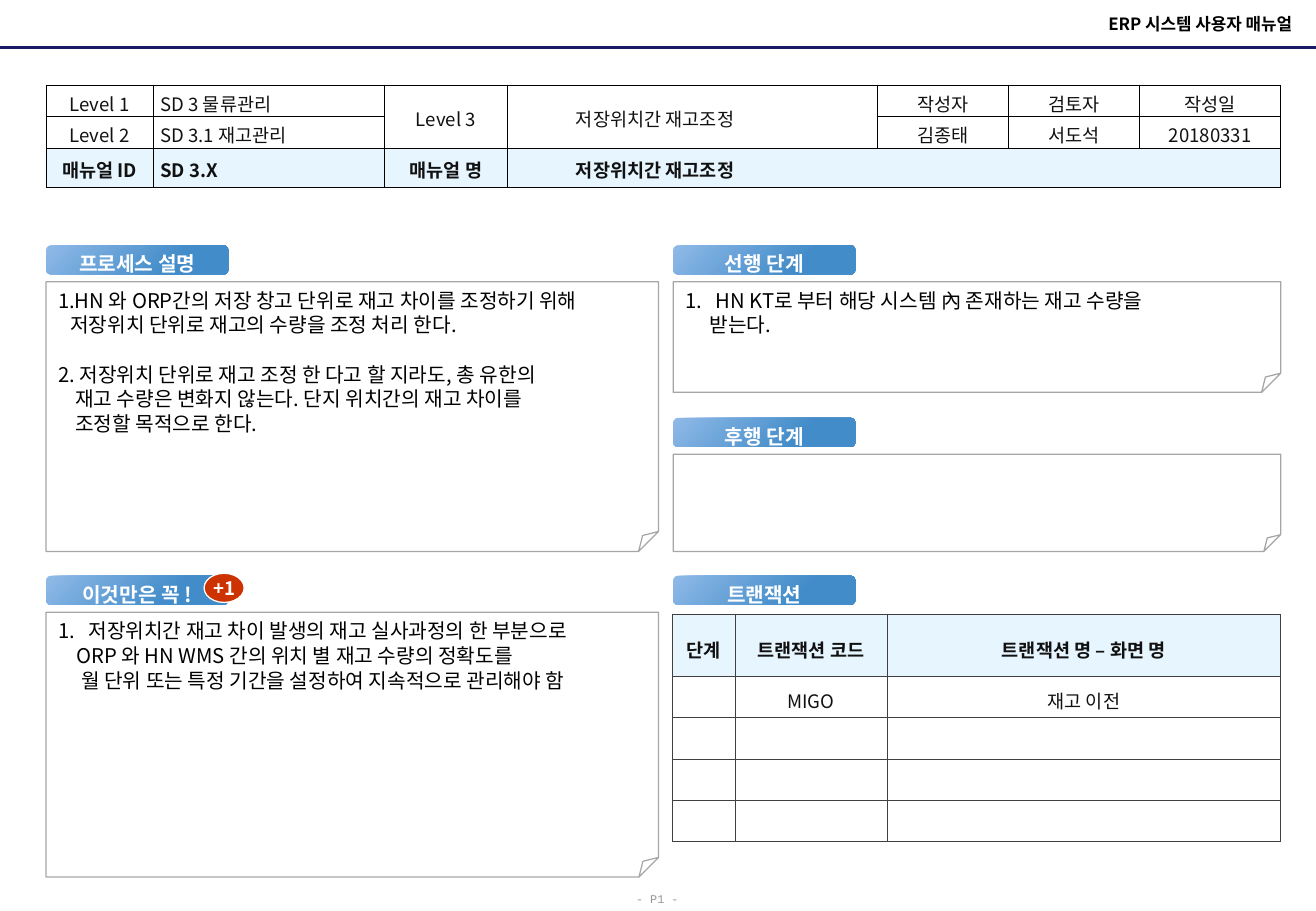
from lxml import etree
from pptx import Presentation
from pptx.dml.color import RGBColor
from pptx.enum.shapes import MSO_CONNECTOR, MSO_SHAPE
from pptx.enum.text import MSO_ANCHOR, PP_ALIGN
from pptx.oxml.ns import qn
from pptx.util import Inches, Pt

BLACK = RGBColor(0, 0, 0)
INK = RGBColor(0x11, 0x11, 0x11)
WHITE = RGBColor(0xFF, 0xFF, 0xFF)
GRAY = RGBColor(0x96, 0x96, 0x96)
NOTE_EDGE = RGBColor(0xA6, 0xA6, 0xA6)
NAVY = RGBColor(0x19, 0x19, 0x66)
RED = RGBColor(0xCC, 0x33, 0x00)
PALE_BLUE = RGBColor(0xE7, 0xF5, 0xFE)
LABEL_START = RGBColor(0x90, 0xBA, 0xE8)
LABEL_END = RGBColor(0x42, 0x8C, 0xC9)
SANS = "Noto Sans CJK KR"
LEFT, RIGHT = 0.38, 5.54
CENTER = PP_ALIGN.CENTER

LABELS = [
    ("프로세스 설명", LEFT, 2.02),
    ("선행 단계", RIGHT, 2.02),
    ("후행 단계", RIGHT, 3.44),
    ("이것만은 꼭 !", LEFT, 4.74),
    ("트랜잭션", RIGHT, 4.74),
]

NOTES = [
    ((LEFT, 2.32, 5.04, 2.22), 0.074, [
        ("1.HN 와 ORP간의 저장 창고 단위로 재고 차이를 조정하기 위해", 0, 0, False),
        ("저장위치 단위로 재고의 수량을 조정 처리 한다.", 0.1, 0, False),
        ("2. 저장위치 단위로 재고 조정 한 다고 할 지라도, 총 유한의", 0, 14.6, False),
        ("재고 수량은 변화지 않는다. 단지 위치간의 재고 차이를", 0.14, 0, False),
        ("조정할 목적으로 한다.", 0.14, 0, False),
    ]),
    ((RIGHT, 2.32, 5, 0.91), 0.173, [
        ("HN KT로 부터 해당 시스템 內 존재하는 재고 수량을", 0.25, 0, True),
        ("받는다.", 0.2, 0, False),
    ]),
    ((RIGHT, 3.74, 5, 0.8), 0.173, []),
    ((LEFT, 5.04, 5.04, 2.18), 0.074, [
        ("저장위치간 재고 차이 발생의 재고 실사과정의 한 부분으로", 0.25, 0, True),
        ("ORP 와 HN WMS 간의 위치 별 재고 수량의 정확도를", 0.15, 0, False),
        ("월 단위 또는 특정 기간을 설정하여 지속적으로 관리해야 함", 0.19, 0, False),
    ]),
]

MANUAL = {
    "place": (LEFT, 0.7), "cols": [0.88, 1.9, 1.02, 3.04, 1.08, 1.08, 1.16],
    "rows": [0.26, 0.26, 0.32], "edge": "000000", "spacing": 17,
    "shaded": 2, "left": {1: 0, 3: 0.5}, "insets": (0.06, 0.02, 0.06, 0),
    "merges": [(0, 2, 1, 2), (0, 3, 1, 3), (2, 3, 2, 6)], "plain": WHITE,
    "cells": [
        ["Level 1", "SD 3 물류관리", "Level 3", "저장위치간 재고조정", "작성자", "검토자", "작성일"],
        ["Level 2", "SD 3.1 재고관리", "", "", "김종태", "서도석", "20180331"],
        ["매뉴얼 ID", "SD 3.X", "매뉴얼 명", "저장위치간 재고조정", "", "", ""],
    ],
}
TRANSACTIONS = {
    "place": (5.53, 5.06), "cols": [0.52, 1.25, 3.24],
    "rows": [0.51, 0.34, 0.34, 0.34, 0.34], "edge": "404040", "spacing": 20,
    "shaded": 0, "left": {}, "insets": (0.05, 0.02, 0.05, 0.02),
    "merges": [], "plain": None,
    "cells": [
        ["단계", "트랜잭션 코드", "트랜잭션 명 – 화면 명"],
        ["", "MIGO", "재고 이전"],
        ["", "", ""], ["", "", ""], ["", "", ""],
    ],
}


def set_all(target, values):
    for name, value in values.items():
        setattr(target, name, value)


def set_insets(target, insets):
    sides = ("margin_left", "margin_top", "margin_right", "margin_bottom")
    set_all(target, {side: Inches(inset) for side, inset in zip(sides, insets)})


def write(para, text, size, color, bold=False, face=SANS, **layout):
    set_all(para, layout)
    if text:
        span = para.add_run()
        span.text = text
        set_all(span.font, {"size": Pt(size), "bold": bold, "name": face})
        span.font.color.rgb = color
        etree.SubElement(span.font._element, qn("a:ea"), typeface=face)


def add_shape(page, kind, place, edge=None):
    shape = page.shapes.add_shape(kind, *map(Inches, place))
    shape.shadow.inherit = False
    shape.fill.background()
    if edge is None:
        shape.line.fill.background()
    else:
        shape.line.color.rgb = edge
        shape.line.width = Pt(0.75)
    return shape


def add_text(page, place, text, size, color, align, **font):
    frame = page.shapes.add_textbox(*map(Inches, place)).text_frame
    set_all(frame, {"word_wrap": True, "vertical_anchor": MSO_ANCHOR.MIDDLE})
    write(frame.paragraphs[0], text, size, color, alignment=align, **font)


def add_label(page, text, left, top):
    shape = add_shape(page, MSO_SHAPE.ROUNDED_RECTANGLE, (left, top, 1.5, 0.24))
    shape.fill.gradient()
    shape.fill.gradient_angle = 315
    stops = [(0, LABEL_START), (0.7, LABEL_END)]
    for stop, (position, color) in zip(shape.fill.gradient_stops, stops):
        stop.position = position
        stop.color.rgb = color
    frame = shape.text_frame
    set_insets(frame, (0, 0, 0, 0.04))
    frame.vertical_anchor = MSO_ANCHOR.MIDDLE
    write(frame.paragraphs[0], text, 12, WHITE, True, alignment=CENTER, line_spacing=Pt(21.8))


def add_note(page, place, fold, lines):
    shape = add_shape(page, MSO_SHAPE.FOLDED_CORNER, place, NOTE_EDGE)
    guides = shape._element.spPr.find(qn("a:prstGeom")).find(qn("a:avLst"))
    for guide in list(guides):
        guides.remove(guide)
    etree.SubElement(guides, qn("a:gd"), name="adj", fmla=f"val {round(fold * 100000)}")
    frame = shape.text_frame
    set_all(frame, {"word_wrap": True, "vertical_anchor": MSO_ANCHOR.TOP})
    for index, (text, indent, before, numbered) in enumerate(lines):
        para = frame.add_paragraph() if index else frame.paragraphs[0]
        props = para._p.get_or_add_pPr()
        props.set("marL", str(Inches(indent)))
        props.set("indent", str(-Inches(indent) if numbered else 0))
        if numbered:
            etree.SubElement(props, qn("a:buFont"), typeface="+mj-lt")
            etree.SubElement(props, qn("a:buAutoNum"), type="arabicPeriod")
        layout = {"alignment": PP_ALIGN.LEFT, "line_spacing": Pt(14.6)}
        if before:
            layout["space_before"] = Pt(before)
        write(para, text, 12, BLACK, **layout)


def add_borders(cell, color):
    props = cell._tc.get_or_add_tcPr()
    for side in ("lnL", "lnR", "lnT", "lnB"):
        line = etree.SubElement(props, qn("a:" + side), w=str(Pt(0.5)))
        fill = etree.SubElement(line, qn("a:solidFill"))
        etree.SubElement(fill, qn("a:srgbClr"), val=color)


def add_grid(page, grid):
    cols, rows = grid["cols"], grid["rows"]
    place = (*grid["place"], sum(cols), sum(rows))
    table = page.shapes.add_table(len(rows), len(cols), *map(Inches, place)).table
    set_all(table, {"first_row": False, "horz_banding": False})
    for column, width in zip(table.columns, cols):
        column.width = Inches(width)
    for row, height in zip(table.rows, rows):
        row.height = Inches(height)
    for r, texts in enumerate(grid["cells"]):
        shaded = r == grid["shaded"]
        color = PALE_BLUE if shaded else grid["plain"]
        for c, text in enumerate(texts):
            cell = table.cell(r, c)
            add_borders(cell, grid["edge"])
            if color is None:
                cell.fill.background()
            else:
                cell.fill.solid()
                cell.fill.fore_color.rgb = color
            set_insets(cell, grid["insets"])
            cell.vertical_anchor = MSO_ANCHOR.MIDDLE
            para = cell.text_frame.paragraphs[0]
            indent = grid["left"].get(c)
            if indent:
                para._p.get_or_add_pPr().set("marL", str(Inches(indent)))
            align = CENTER if indent is None else PP_ALIGN.LEFT
            write(para, text, 11, INK, shaded, alignment=align, line_spacing=Pt(grid["spacing"]))
    for top, left, bottom, right in grid["merges"]:
        table.cell(top, left).merge(table.cell(bottom, right))


def main():
    deck = Presentation()
    set_all(deck, {"slide_width": Inches(10.83), "slide_height": Inches(7.5)})
    page = deck.slides.add_slide(deck.slide_layouts[6])
    rule = page.shapes.add_connector(
        MSO_CONNECTOR.STRAIGHT, 0, Inches(0.39), deck.slide_width, Inches(0.39))
    rule.line.color.rgb = NAVY
    rule.line.width = Pt(1.5)
    etree.SubElement(rule._element.spPr, qn("a:effectLst"))
    add_text(page, (6.04, 0.06, 4.69, 0.27), "ERP 시스템 사용자 매뉴얼", 10, BLACK,
             PP_ALIGN.RIGHT, bold=True)
    add_text(page, (4.91, 7.27, 1, 0.25), "- P1 -", 7, GRAY, CENTER, face="Courier New")
    for grid in (MANUAL, TRANSACTIONS):
        add_grid(page, grid)
    for label in LABELS:
        add_label(page, *label)
    for note in NOTES:
        add_note(page, *note)
    badge = add_shape(page, MSO_SHAPE.OVAL, (1.68, 4.72, 0.33, 0.24), WHITE)
    badge.fill.solid()
    badge.fill.fore_color.rgb = RED
    set_all(badge.text_frame, {"word_wrap": False, "vertical_anchor": MSO_ANCHOR.MIDDLE})
    write(badge.text_frame.paragraphs[0], "+1", 11, WHITE, True, alignment=CENTER)
    deck.save("out.pptx")


if __name__ == "__main__":
    main()
